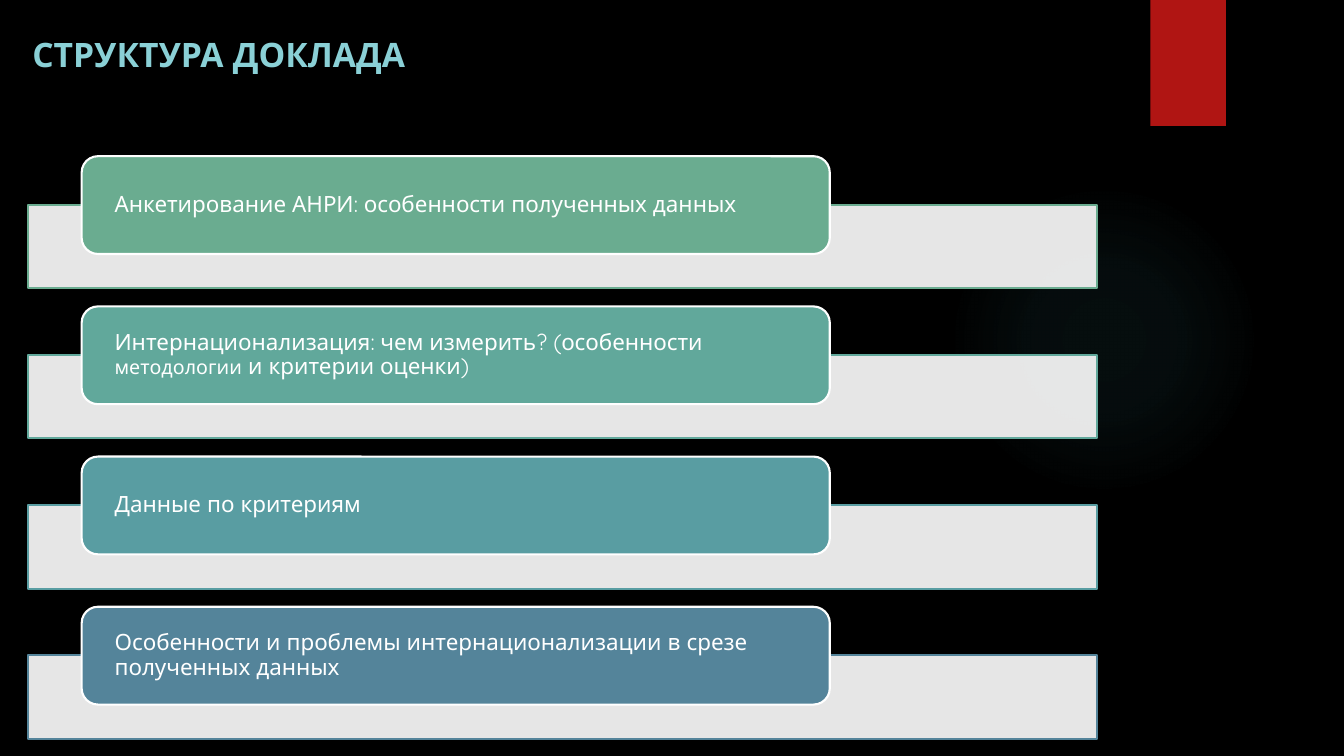
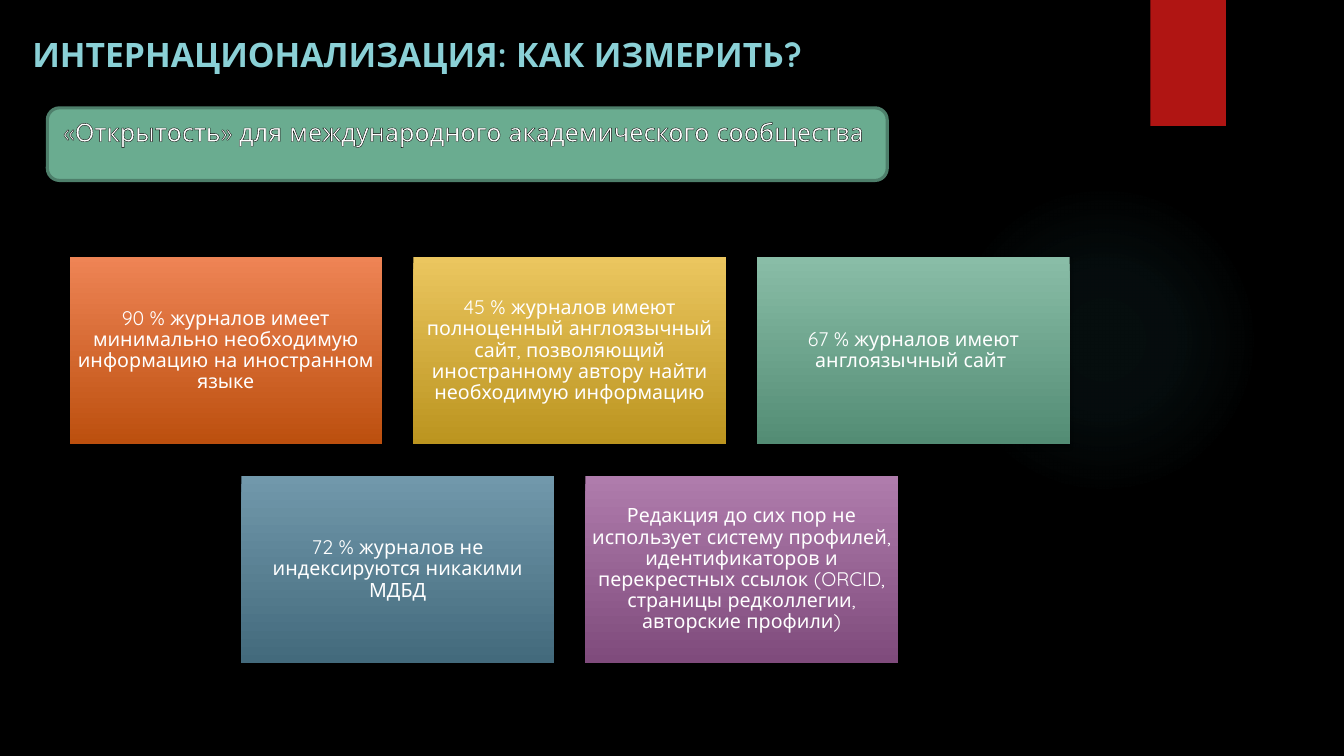
from dataclasses import dataclass

from lxml import etree
from pptx import Presentation
from pptx import util as u
from pptx.dml.color import RGBColor
from pptx.enum import shapes, text
from pptx.oxml import ns, parse_xml


@dataclass(frozen=True)
class Theme:
    font: str = "Quicksand"
    background: str = "000000"
    heading: str = "8AD0D6"
    ribbon: str = "B01513"
    glow: str = "50B9C1"
    white: str = "FFFFFF"
    banner: str = "6AAC90"
    banner_edge: str = "4E7F6B"
    heading_size: float = 24
    banner_size: float = 18
    topic_size: float = 16
    small_size: float = 14


THEME = Theme()
RECT = shapes.MSO_SHAPE.RECTANGLE
ROUND = shapes.MSO_SHAPE.ROUNDED_RECTANGLE

TOPICS = [
    ("6AAC90", [("Анкетирование АНРИ: особенности полученных данных", THEME.topic_size)]),
    ("61A89B", [
        ("Интернационализация: чем измерить? (особенности ", THEME.topic_size),
        ("методологии", THEME.small_size),
        (" и критерии оценки)", THEME.topic_size),
    ]),
    ("599DA2", [("Данные по критериям", THEME.topic_size)]),
    ("54849A", [("Особенности и проблемы интернационализации в срезе полученных данных",
                 THEME.topic_size)]),
]

FINDINGS = [
    [
        ("EE8455", "BC4F0E", "90 % журналов имеет минимально необходимую информацию "
                             "на иностранном языке"),
        ("EBC65F", "BB941F", "45 % журналов имеют полноценный англоязычный сайт, позволяющий "
                             "иностранному автору найти необходимую информацию"),
        ("89BDA7", "538C74", "67 % журналов имеют англоязычный сайт "),
    ],
    [
        ("7198AB", "436A7C", "72 % журналов не индексируются никакими МДБД"),
        ("AF7CAC", "7F4B7C", "Редакция до сих пор не использует систему профилей, "
                             "идентификаторов и перекрестных ссылок (ORCID, страницы "
                             "редколлегии, авторские профили)"),
    ],
]


def rgb(value):
    return RGBColor.from_string(value)


def apply_format(target, values):
    for name, value in values.items():
        setattr(target, name, value)


def add_block(slide, kind, box, fill=None, line=None, line_width=1.5):
    block = slide.shapes.add_shape(kind, *map(u.Inches, box))
    block.shadow.inherit = False
    if fill:
        block.fill.solid()
        block.fill.fore_color.rgb = rgb(fill)
    if line:
        block.line.color.rgb = rgb(line)
        block.line.width = u.Pt(line_width)
    else:
        block.line.fill.background()
    return block


def write(shape, runs, color=THEME.white, bold=False, align=text.PP_ALIGN.LEFT,
          anchor=text.MSO_ANCHOR.MIDDLE, inset=(0.1, 0.05), spacing=None):
    frame = shape.text_frame
    across, down = map(u.Inches, inset)
    apply_format(frame, {
        "word_wrap": True, "auto_size": text.MSO_AUTO_SIZE.NONE, "vertical_anchor": anchor,
        "margin_left": across, "margin_right": across,
        "margin_top": down, "margin_bottom": down,
    })
    paragraph = frame.paragraphs[0]
    apply_format(paragraph, {"alignment": align, "line_spacing": spacing})
    for words, size in runs:
        run = paragraph.add_run()
        run.text = words
        apply_format(run.font, {"name": THEME.font, "size": u.Pt(size), "bold": bold})
        run.font.color.rgb = rgb(color)
    return paragraph


def add_shadow(shape):
    effects = shape.element.spPr.find(ns.qn("a:effectLst"))
    effects.append(parse_xml(
        f'<a:outerShdw {ns.nsdecls("a")} blurRad="{u.Pt(3)}" dist="{u.Pt(2)}" dir="5400000" '
        'rotWithShape="0"><a:srgbClr val="000000"><a:alpha val="45000"/></a:srgbClr>'
        '</a:outerShdw>'))


def set_opacity(shape, percent):
    color = shape.element.spPr.find(ns.qn("a:solidFill"))[0]
    etree.SubElement(color, ns.qn("a:alpha"), val=str(percent * 1000))


def set_glow(shape, color, stops):
    marks = "".join(
        f'<a:gs pos="{place * 1000}"><a:srgbClr val="{color}">'
        f'<a:alpha val="{opacity * 1000}"/></a:srgbClr></a:gs>' for place, opacity in stops)
    shape.fill.background()
    properties = shape.element.spPr
    properties.replace(properties.find(ns.qn("a:noFill")), parse_xml(
        f'<a:gradFill {ns.nsdecls("a")} rotWithShape="1"><a:gsLst>{marks}</a:gsLst>'
        '<a:path path="circle"><a:fillToRect l="50000" t="50000" r="50000" b="50000"/>'
        '</a:path></a:gradFill>'))


def outline_text(paragraph, color, width):
    for run in paragraph.runs:
        run.font.element.insert(0, parse_xml(
            f'<a:ln {ns.nsdecls("a")} w="{u.Pt(width)}"><a:solidFill>'
            f'<a:srgbClr val="{color}"/></a:solidFill></a:ln>')) if hasattr(
                run.font, "element") else run._r.get_or_add_rPr().insert(0, parse_xml(
                    f'<a:ln {ns.nsdecls("a")} w="{u.Pt(width)}"><a:solidFill>'
                    f'<a:srgbClr val="{color}"/></a:solidFill></a:ln>'))


def decorate_layout(layout, slide):
    fill = layout.slide_master.background.fill
    fill.solid()
    fill.fore_color.rgb = rgb(THEME.background)
    glow = add_block(slide, shapes.MSO_SHAPE.OVAL, (9.41, 1.83, 3.08, 3.08))
    set_glow(glow, THEME.glow, [(0, 7), (36, 6), (69, 0)])
    ribbon = add_block(slide, RECT, (11.41, 0, 0.75, 1.25), THEME.ribbon)
    add_shadow(ribbon)
    for decoration in (glow, ribbon):
        layout.shapes.element.append(decoration.element)


def add_heading(slide, words, box=(0.22, 0.29, 10.48, 0.94)):
    heading = slide.shapes.title
    apply_format(heading, dict(zip(("left", "top", "width", "height"), map(u.Inches, box))))
    write(heading, [(words, THEME.heading_size)], THEME.heading, True,
          anchor=text.MSO_ANCHOR.TOP)


def add_topics(slide, box, pitch=1.49):
    left, top, width = box
    for index, (color, runs) in enumerate(TOPICS):
        row = top + index * pitch
        bar = add_block(slide, RECT, (left, row + 0.48, width, 0.83), THEME.white, color)
        set_opacity(bar, 90)
        label = add_block(slide, ROUND, (left + 0.53, row, width * 0.7, 0.97),
                          color, THEME.white)
        write(label, runs, inset=(0.28, 0), spacing=0.9)


def add_banner(slide, words, box):
    banner = add_block(slide, ROUND, box, THEME.banner, THEME.banner_edge, 2.25)
    paragraph = write(banner, [(words, THEME.banner_size)], align=text.PP_ALIGN.CENTER,
                      anchor=text.MSO_ANCHOR.TOP)
    outline_text(paragraph, THEME.background, 0.75)


def add_finding(slide, box, upper, lower, words):
    card = add_block(slide, RECT, box)
    card.fill.gradient()
    card.fill.gradient_angle = 270
    for stop, color, place in zip(card.fill.gradient_stops, (upper, lower), (0, 1)):
        stop.color.rgb = rgb(color)
        stop.position = place
    add_shadow(card)
    write(card, [(words, THEME.small_size)], align=text.PP_ALIGN.CENTER,
          inset=(0.06, 0.06), spacing=0.9)


def add_findings(slide, box, card_width=3.1, card_height=1.86, gap=0.31):
    left, top, width = box
    for row, cards in enumerate(FINDINGS):
        row_width = len(cards) * (card_width + gap) - gap
        start = left + (width - row_width) / 2
        for column, card in enumerate(cards):
            place = (start + column * (card_width + gap), top + row * (card_height + gap))
            add_finding(slide, (*place, card_width, card_height), *card)


def main():
    deck = Presentation()
    apply_format(deck, {"slide_width": u.Inches(13.33), "slide_height": u.Inches(7.5)})
    layout = deck.slide_layouts[5]

    structure = deck.slides.add_slide(layout)
    decorate_layout(layout, structure)
    add_heading(structure, "СТРУКТУРА ДОКЛАДА")
    add_topics(structure, (0.28, 1.55, 10.6))

    measures = deck.slides.add_slide(layout)
    add_heading(measures, "ИНТЕРНАЦИОНАЛИЗАЦИЯ: КАК ИЗМЕРИТЬ?")
    add_banner(measures, "«Открытость» для международного академического сообщества ",
               (0.47, 1.07, 8.33, 0.72))
    add_findings(measures, (0.69, 2.55, 9.92))

    deck.save("out.pptx")


if __name__ == "__main__":
    main()
